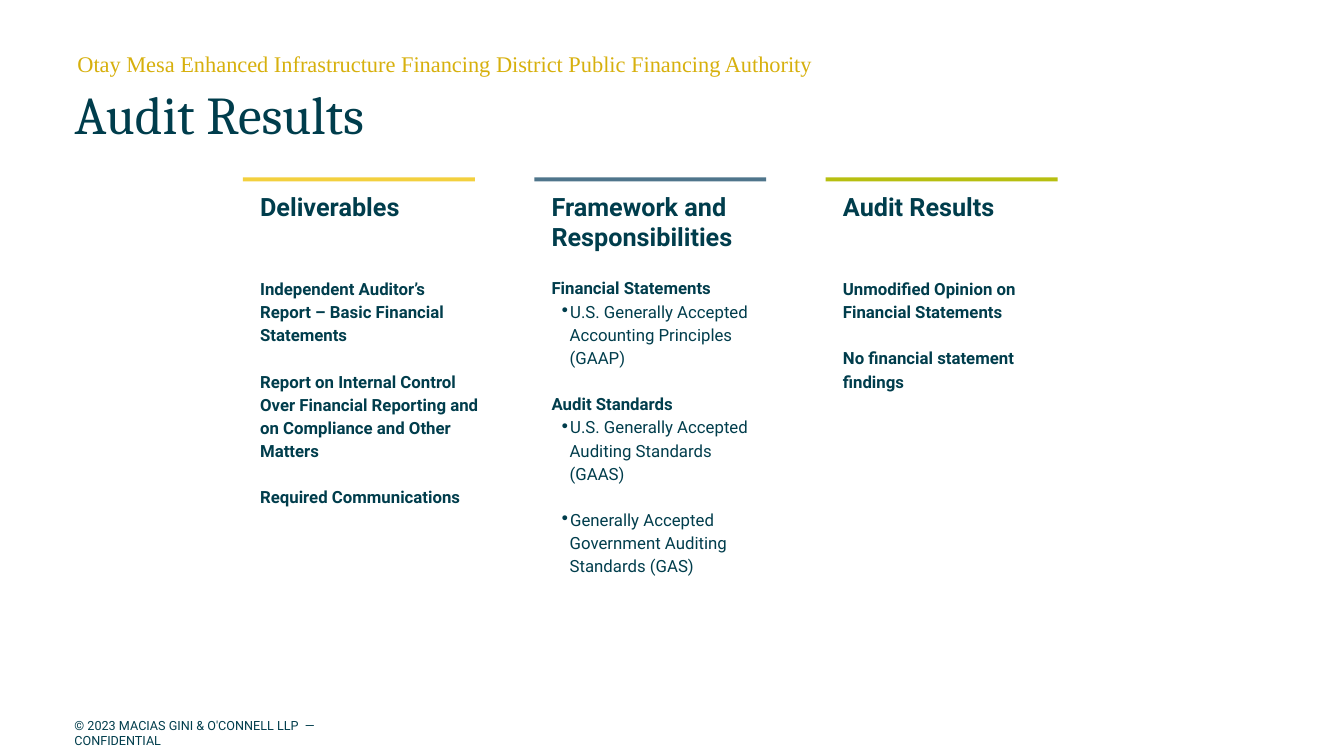
from dataclasses import dataclass

from lxml import etree
from pptx import Presentation
from pptx.dml.color import RGBColor
from pptx.enum.shapes import MSO_SHAPE
from pptx.enum.text import MSO_ANCHOR, MSO_AUTO_SIZE, PP_ALIGN
from pptx.oxml.ns import qn
from pptx.util import Emu, Pt

RECTANGLE = MSO_SHAPE.RECTANGLE
TOP, MIDDLE = MSO_ANCHOR.TOP, MSO_ANCHOR.MIDDLE
NO_AUTOFIT = MSO_AUTO_SIZE.NONE
LEFT = PP_ALIGN.LEFT

EMU_PER_PX = 9144
TEAL = "003D4C"
GOLD = "D7B00D"
BODY_FONT = "Roboto"
LINE_GAP = 16.5
HEADING_LINE = 22

COLUMN_LEFT, COLUMN_PITCH = 241, 289
BAR_TOP, BAR_WIDTH, BAR_HEIGHT = 176, 230, 4
TEXT_TOP, TEXT_WIDTH, TEXT_HEIGHT = 186, 241, 355


@dataclass(frozen=True)
class Item:
    text: str
    gap: float = 0
    bullet: bool = False


@dataclass(frozen=True)
class Column:
    heading: str
    color: str
    items: tuple[Item, ...]


COLUMNS = (
    Column("Deliverables", "F3D03E", (
        Item("Independent Auditor’s Report – Basic Financial Statements", LINE_GAP + HEADING_LINE),
        Item("Report on Internal Control Over Financial Reporting and on Compliance "
             "and Other Matters", LINE_GAP),
        Item("Required Communications", LINE_GAP),
    )),
    Column("Framework and Responsibilities", "4F758B", (
        Item("Financial Statements", LINE_GAP),
        Item("U.S. Generally Accepted Accounting Principles (GAAP)", bullet=True),
        Item("Audit Standards", LINE_GAP),
        Item("U.S. Generally Accepted Auditing Standards (GAAS)", bullet=True),
        Item("Generally Accepted Government Auditing Standards (GAS)", LINE_GAP, True),
    )),
    Column("Audit Results", "B7BF10", (
        Item("Unmodified Opinion on Financial Statements", LINE_GAP + HEADING_LINE),
        Item("No financial statement findings", LINE_GAP),
    )),
)


def px(length: int) -> Emu:
    return Emu(length * EMU_PER_PX)


def rgb(color: str) -> RGBColor:
    return RGBColor.from_string(color)


def set_frame(frame, side: int, edge: int, anchor=TOP) -> None:
    frame.word_wrap = True
    frame.auto_size = NO_AUTOFIT
    frame.vertical_anchor = anchor
    frame.margin_left = frame.margin_right = px(side)
    frame.margin_top = frame.margin_bottom = px(edge)


def set_font(para, name: str, size: int, color: str, bold: bool = False) -> None:
    para.font.name = name
    para.font.size = Pt(size)
    para.font.bold = bold
    para.font.color.rgb = rgb(color)


def set_indent(para, margin: int, first: int = 0) -> None:
    properties = para._p.get_or_add_pPr()
    properties.set("marL", str(px(margin)))
    properties.set("indent", str(px(first)))


def add_bullet(para) -> None:
    properties = para._p.get_or_add_pPr()
    bullet_color = etree.SubElement(properties, qn("a:buClr"))
    etree.SubElement(bullet_color, qn("a:srgbClr"), val=TEAL)
    etree.SubElement(properties, qn("a:buChar"), char="∙")


def add_line(page, text: str, left: int, top: int, width: int, height: int,
             font: str, size: int, color: str, spacing: float = 1.0) -> None:
    box = page.shapes.add_textbox(px(left), px(top), px(width), px(height))
    set_frame(box.text_frame, 10, 5)
    para = box.text_frame.paragraphs[0]
    para.text = text
    para.line_spacing = spacing
    set_font(para, font, size, color)


def add_title(page, text: str) -> None:
    title = page.shapes.title
    title.left, title.top, title.width, title.height = px(64), px(77), px(1150), px(79)
    set_frame(title.text_frame, 10, 5, MIDDLE)
    para = title.text_frame.paragraphs[0]
    para.text = text
    para.alignment = LEFT
    para.line_spacing = 0.9
    set_font(para, "Cambria", 38, TEAL)


def add_column(page, column: Column, left: int) -> None:
    bar = page.shapes.add_shape(RECTANGLE, px(left), px(BAR_TOP), px(BAR_WIDTH), px(BAR_HEIGHT))
    bar.shadow.inherit = False
    bar.fill.solid()
    bar.fill.fore_color.rgb = rgb(column.color)
    bar.line.fill.background()

    box = page.shapes.add_textbox(px(left), px(TEXT_TOP), px(TEXT_WIDTH), px(TEXT_HEIGHT))
    set_frame(box.text_frame, 7, 4)
    heading = box.text_frame.paragraphs[0]
    heading.text = column.heading
    set_indent(heading, 10)
    set_font(heading, BODY_FONT, 18, TEAL, True)

    for item in column.items:
        para = box.text_frame.add_paragraph()
        para.text = item.text
        para.line_spacing = 1.15
        para.space_before = Pt(item.gap)
        if item.bullet:
            set_indent(para, 28, -10)
            add_bullet(para)
        else:
            set_indent(para, 10)
        set_font(para, BODY_FONT, 12, TEAL, not item.bullet)


def main() -> None:
    deck = Presentation()
    deck.slide_width, deck.slide_height = px(1333), px(750)
    page = deck.slides.add_slide(deck.slide_layouts[5])
    add_title(page, "Audit Results")
    add_line(page, "Otay Mesa Enhanced Infrastructure Financing District Public Financing Authority",
             67, 51, 786, 46, "Times New Roman", 16, GOLD, 0.75)
    for index, column in enumerate(COLUMNS):
        add_column(page, column, COLUMN_LEFT + index * COLUMN_PITCH)
    add_line(page, "© 2023 MACIAS GINI & O'CONNELL LLP  —  CONFIDENTIAL",
             64, 707, 343, 25, BODY_FONT, 9, TEAL)
    deck.save("out.pptx")


if __name__ == "__main__":
    main()
